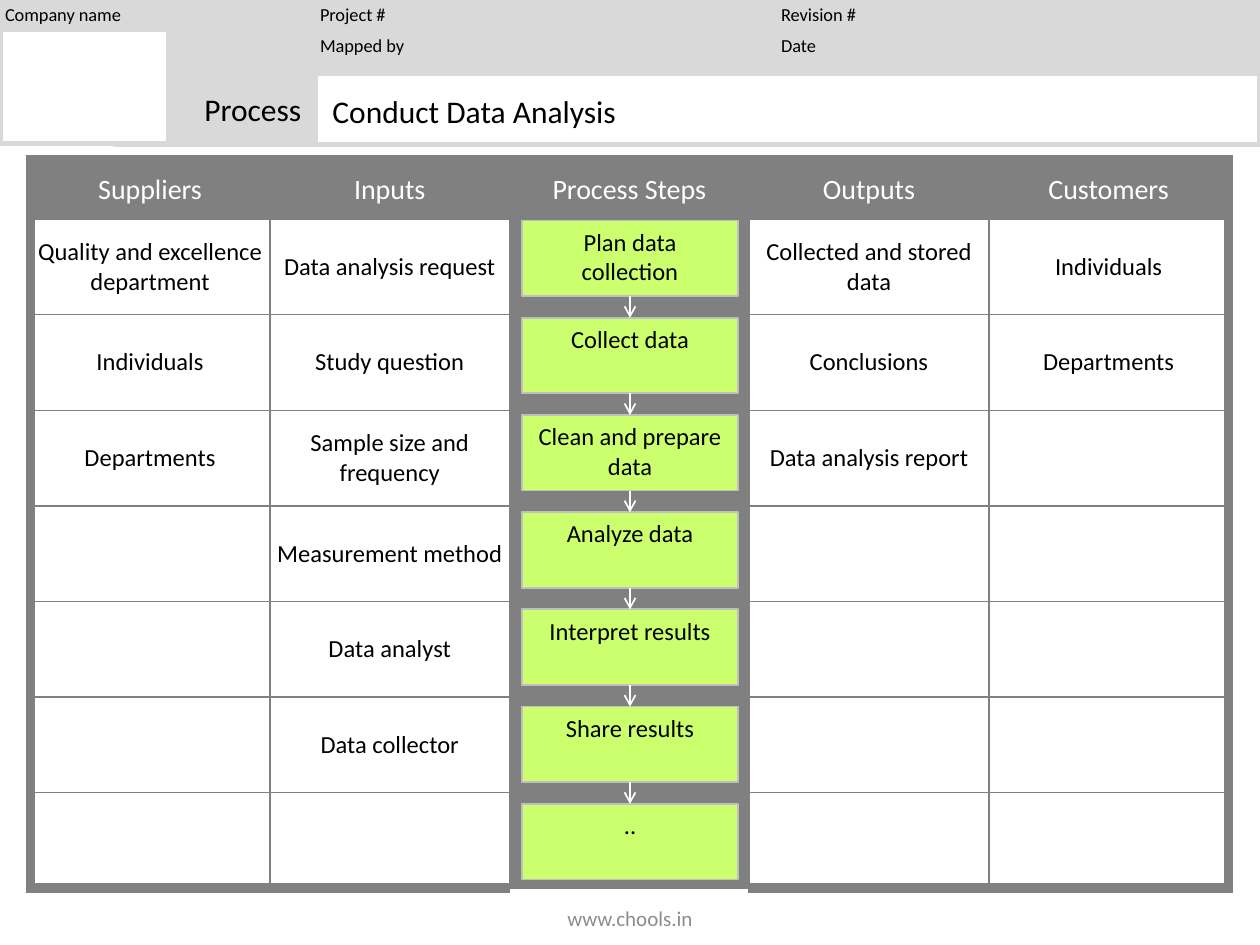
from lxml import etree
from pptx import Presentation
from pptx import util as u
from pptx.dml.color import RGBColor
from pptx.enum import shapes, text
from pptx.oxml import ns

Inches = u.Inches
BLACK = RGBColor(0x00, 0x00, 0x00)
WHITE = RGBColor(0xFF, 0xFF, 0xFF)
BAND = RGBColor(0xD9, 0xD9, 0xD9)
GRID = RGBColor(0x80, 0x80, 0x80)
STEP_FILL = RGBColor(0xCB, 0xFF, 0x6D)
STEP_EDGE = RGBColor(0xBF, 0xBF, 0xBF)
FOOTER = RGBColor(0x8C, 0x8C, 0x8C)
LEFT, CENTER, RIGHT = text.PP_ALIGN.LEFT, text.PP_ALIGN.CENTER, text.PP_ALIGN.RIGHT
TOP, MIDDLE = text.MSO_ANCHOR.TOP, text.MSO_ANCHOR.MIDDLE

HEADINGS = ["Suppliers", "Inputs", "Process Steps", "Outputs", "Customers"]
COLUMNS = {
    0: ["Quality and excellence department", "Individuals", "Departments"],
    1: ["Data analysis request", "Study question", "Sample size and frequency",
        "Measurement method", "Data analyst", "Data collector"],
    3: ["Collected and stored data", "Conclusions", "Data analysis report"],
    4: ["Individuals", "Departments"],
}
STEPS = ["Plan data collection", "Collect data", "Clean and prepare data",
         "Analyze data", "Interpret results", "Share results", ".."]


def style(paragraph, size, color, align):
    """Set the font and alignment of one paragraph."""
    paragraph.alignment = align
    paragraph.font.name = "Calibri"
    paragraph.font.size = u.Pt(size)
    paragraph.font.color.rgb = color


def write(frame, words, size, color=BLACK, align=LEFT, anchor=TOP, inset=(0.1, 0.05)):
    """Fill a text frame with one styled paragraph."""
    frame.word_wrap = True
    frame.vertical_anchor = anchor
    frame.margin_left = frame.margin_right = Inches(inset[0])
    frame.margin_top = frame.margin_bottom = Inches(inset[1])
    frame.text = words
    style(frame.paragraphs[0], size, color, align)


def add_label(slide, x, y, w, h, words, size, **options):
    """Add a text box."""
    label = slide.shapes.add_textbox(Inches(x), Inches(y), Inches(w), Inches(h))
    write(label.text_frame, words, size, **options)


def add_box(slide, x, y, w, h, fill, edge, weight):
    """Add a flat rectangle."""
    box = slide.shapes.add_shape(shapes.MSO_SHAPE.RECTANGLE,
                                 Inches(x), Inches(y), Inches(w), Inches(h))
    box.shadow.inherit = False
    box.fill.solid()
    box.fill.fore_color.rgb = fill
    box.line.color.rgb = edge
    box.line.width = u.Pt(weight)
    return box


def add_arrow(slide, x, top, bottom):
    """Add a white downward arrow."""
    arrow = slide.shapes.add_connector(shapes.MSO_CONNECTOR.STRAIGHT,
                                       Inches(x), Inches(top), Inches(x), Inches(bottom))
    arrow.line.color.rgb = WHITE
    arrow.line.width = u.Pt(1)
    etree.SubElement(arrow.line._get_or_add_ln(), ns.qn("a:tailEnd"), type="arrow")
    etree.SubElement(arrow._element.spPr, ns.qn("a:effectLst"))


def add_header(slide, x, y, w):
    """Draw the project details and the process title."""
    upper, lower, split = 0.57, 0.57, 2.5
    title_y = y + upper + 0.01
    process = add_box(slide, x + 0.91, title_y, 1.58, lower, BAND, BAND, 3)
    write(process.text_frame, "Process", 18, align=RIGHT, anchor=MIDDLE)
    add_box(slide, x, y, w, upper, BAND, BAND, 3)
    add_box(slide, x, y + 0.23, 1.34, 0.91, WHITE, BAND, 3)
    add_box(slide, x + split, title_y, w - split, lower, WHITE, BAND, 3)
    details = [(0, 0, "Company name"), (split, 0, "Project #"), (split, 0.24, "Mapped by"),
               (6.16, 0, "Revision #"), (6.16, 0.24, "Date")]
    for dx, dy, words in details:
        add_label(slide, x + dx, y + dy, 2.5, 0.23, words, 10.5,
                  anchor=MIDDLE, inset=(0.04, 0.02))
    add_label(slide, x + split + 0.04, y + 0.68, 7.35, 0.4, "Conduct Data Analysis", 18)


def set_borders(cell, weights):
    """Give a cell its left, right, top and bottom lines."""
    props = cell._tc.get_or_add_tcPr()
    for position, (side, weight) in enumerate(zip("LRTB", weights)):
        line = etree.Element(ns.qn(f"a:ln{side}"), w=str(u.Pt(weight)))
        fill = etree.SubElement(line, ns.qn("a:solidFill"))
        etree.SubElement(fill, ns.qn("a:srgbClr"), val=str(GRID))
        props.insert(position, line)


def add_sipoc_table(slide, x, y, w, h):
    """Draw the table with its merged column for the steps."""
    rows, cols, head = len(STEPS) + 1, len(HEADINGS), 0.47
    table = slide.shapes.add_table(rows, cols, Inches(x), Inches(y),
                                   Inches(w), Inches(h)).table
    table.first_row = table.horz_banding = False
    for column in table.columns:
        column.width = Inches(w / cols)
    for r, row in enumerate(table.rows):
        row.height = Inches((h - head) / len(STEPS) if r else head)
        for c, cell in enumerate(row.cells):
            entries = [HEADINGS[c]] + COLUMNS.get(c, [])
            cell.margin_left = cell.margin_right = cell.margin_top = cell.margin_bottom = 0
            cell.vertical_anchor = MIDDLE
            if r == 0 or c == 2:
                cell.fill.solid()
                cell.fill.fore_color.rgb = GRID
            else:
                cell.fill.background()
            cell.text = entries[r] if r < len(entries) else ""
            style(cell.text_frame.paragraphs[0], 14 if r else 16,
                  BLACK if r else WHITE, CENTER)
            outer = (c == 0, c == cols - 1, r == 0, r == rows - 1)
            set_borders(cell, [6 if edge else 1 for edge in outer])
    table.cell(1, 2).merge(table.cell(rows - 1, 2))


def add_steps(slide, x, y, w, h):
    """Stack the process steps evenly and join them with arrows."""
    step_h = 0.6
    pitch = (h - step_h) / (len(STEPS) - 1)
    for i, words in enumerate(STEPS):
        top = y + i * pitch
        step = add_box(slide, x, top, w, step_h, STEP_FILL, STEP_EDGE, 1)
        write(step.text_frame, words, 14, align=CENTER)
        if i:
            add_arrow(slide, x + w / 2, top - pitch + step_h, top)


def main():
    """Build and save the slide."""
    deck = Presentation()
    deck.slide_width, deck.slide_height = Inches(10), Inches(7.5)
    slide = deck.slides.add_slide(deck.slide_layouts[6])
    add_header(slide, 0, 0, 10)
    add_sipoc_table(slide, 0.24, 1.27, 9.51, 5.78)
    add_steps(slide, 4.14, 1.75, 1.72, 5.23)
    add_label(slide, 3.31, 7.09, 3.38, 0.4, "www.chools.in", 12,
              color=FOOTER, align=CENTER, anchor=MIDDLE)
    deck.save("out.pptx")


if __name__ == "__main__":
    main()
